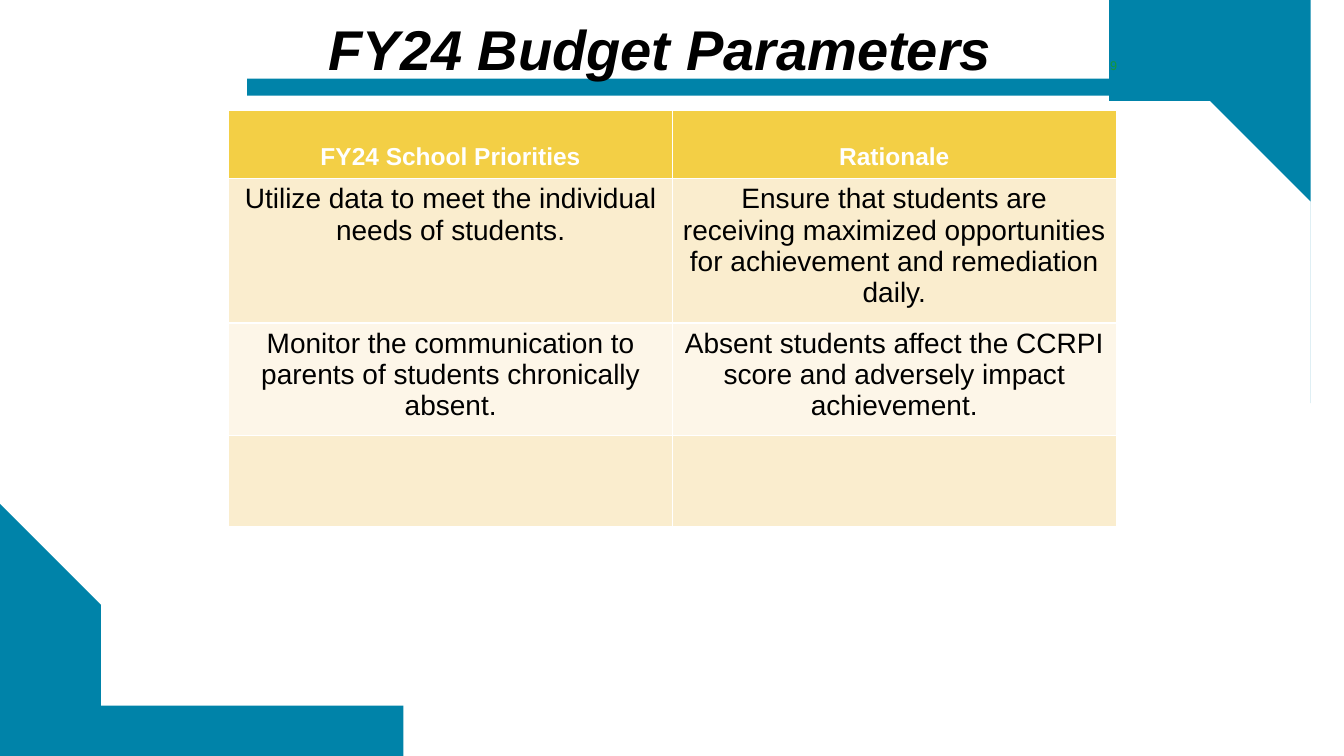
from math import cos, pi, sin

from pptx import Presentation
from pptx import util as u
from pptx.dml.color import RGBColor
from pptx.enum import shapes, text

TEAL = RGBColor(0x00, 0x83, 0xA9)
GOLD = RGBColor(0xF3, 0xCF, 0x45)
SAND = RGBColor(0xFA, 0xED, 0xCE)
CREAM = RGBColor(0xFD, 0xF6, 0xE8)
GREEN = RGBColor(0x15, 0x98, 0x39)
WHITE = RGBColor(0xFF, 0xFF, 0xFF)
BLACK = RGBColor(0, 0, 0)

WIDE, HIGH = 13.33, 7.5
CURVE = 3.95
STEPS = 60
ROWS = [
    ("FY24 School Priorities", "Rationale"),
    ("Utilize data to meet the individual needs of students.",
     "Ensure that students are receiving maximized opportunities "
     "for achievement and remediation daily."),
    ("Monitor the communication to parents of students chronically absent.",
     "Absent students affect the CCRPI score and adversely impact achievement."),
    ("", ""),
]
HEIGHTS = [0.67, 1.43, 1.12, 0.9]
FILLS = [GOLD, SAND, CREAM, SAND]


def paint(shape):
    shape.fill.solid()
    shape.fill.fore_color.rgb = TEAL
    shape.line.fill.background()
    shape.shadow.inherit = False


def write(frame, words, size, color, bold=False, italic=False):
    frame.text = words
    line = frame.paragraphs[0]
    line.alignment = text.PP_ALIGN.CENTER
    for run in line.runs:
        font = run.font
        font.name, font.size, font.color.rgb = "Arial", u.Pt(size), color
        font.bold, font.italic = bold, italic


def place(shape, box):
    shape.left, shape.top, shape.width, shape.height = map(u.Inches, box)


def add_corner(slide, x, y, side):
    """Fill the slide corner at x, y outside a quarter circle; side is 1 at top right, -1 at bottom left."""
    mid_x, mid_y = x - side * CURVE, y + side * CURVE
    turns = [i * pi / 2 / STEPS for i in range(STEPS + 1)]
    arc = [(mid_x + side * CURVE * sin(t), mid_y - side * CURVE * cos(t))
           for t in turns]
    pen = slide.shapes.build_freeform(x, y, scale=u.Inches(1))
    pen.add_line_segments(arc, close=True)
    paint(pen.convert_to_shape())


def add_head(slide, x, y, w, h):
    bar = slide.shapes.add_shape(shapes.MSO_SHAPE.RECTANGLE,
                                 *map(u.Inches, (x, y + h - 0.17, w, 0.17)))
    paint(bar)
    title = slide.shapes.title
    place(title, (x + 0.6, y, 6.99, 0.77))
    slide.shapes._spTree.append(title._element)
    write(title.text_frame, "FY24 Budget Parameters", 40, BLACK, True, True)
    title.text_frame.vertical_anchor = text.MSO_ANCHOR.TOP
    title.text_frame.auto_size = text.MSO_AUTO_SIZE.NONE

    number = slide.shapes.add_textbox(
        *map(u.Inches, (x + w - 1, y + 0.41, 0.81, 0.3)))
    write(number.text_frame, "9", 9, GREEN)
    number.text_frame.word_wrap = True
    number.text_frame.vertical_anchor = text.MSO_ANCHOR.MIDDLE


def add_goals(slide, x, y, w):
    box = map(u.Inches, (x, y, w, sum(HEIGHTS)))
    table = slide.shapes.add_table(len(ROWS), 2, *box).table
    for row, words, high, fill in zip(table.rows, ROWS, HEIGHTS, FILLS):
        row.height = u.Inches(high)
        for cell, word in zip(row.cells, words):
            cell.fill.solid()
            cell.fill.fore_color.rgb = fill
            if fill == GOLD:
                write(cell.text_frame, word, 17.5, WHITE, True)
                cell.vertical_anchor = text.MSO_ANCHOR.BOTTOM
                cell.margin_bottom = u.Inches(0.08)
            else:
                write(cell.text_frame, word, 20, BLACK)


def main():
    deck = Presentation()
    deck.slide_width, deck.slide_height = u.Inches(WIDE), u.Inches(HIGH)
    slide = deck.slides.add_slide(deck.slide_layouts[5])
    add_corner(slide, WIDE, 0, 1)
    add_corner(slide, 0, HIGH, -1)
    add_head(slide, 2.45, 0.09, 9.19, 0.86)
    add_goals(slide, 2.27, 1.1, 8.8)
    deck.save("out.pptx")


if __name__ == "__main__":
    main()
